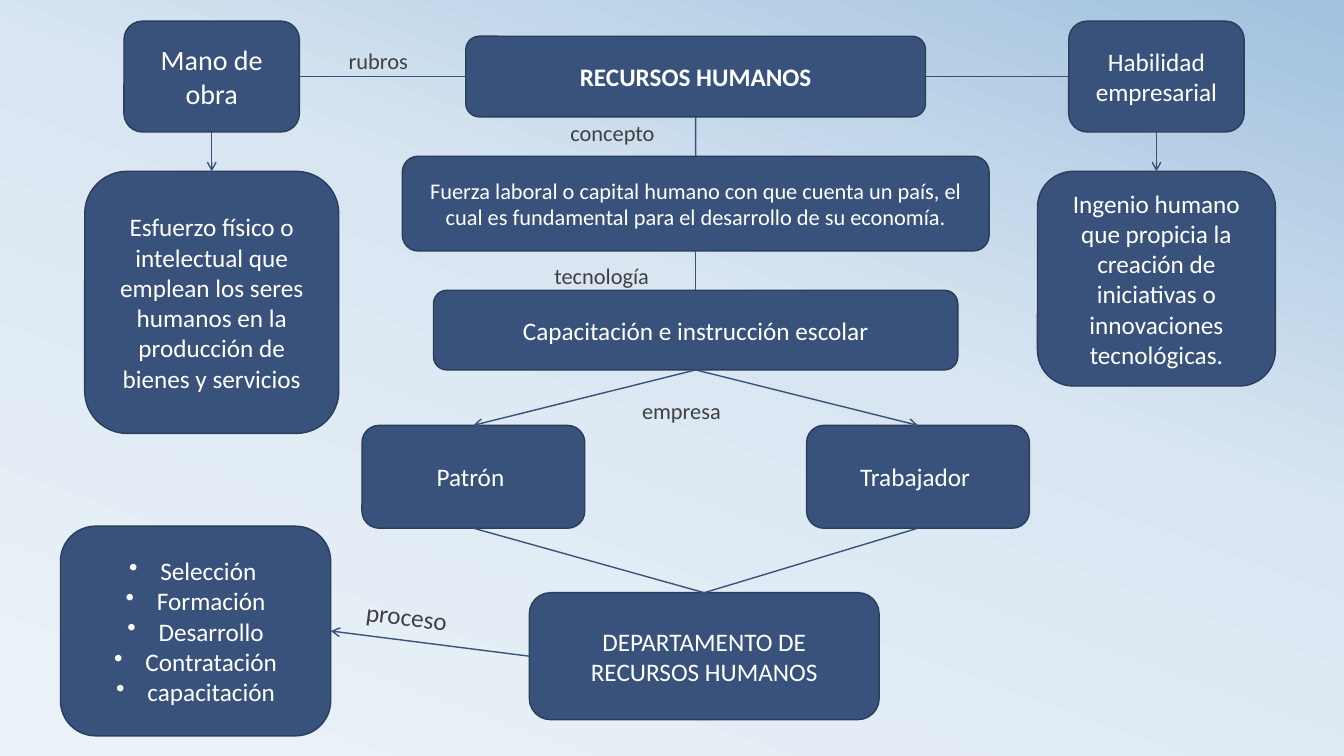
"""Build the concept map of human resources on one slide."""
from copy import deepcopy
from dataclasses import dataclass
from enum import IntEnum

from pptx import Presentation
from pptx.dml.color import RGBColor
from pptx.enum.shapes import MSO_CONNECTOR, MSO_SHAPE
from pptx.enum.text import MSO_ANCHOR, MSO_AUTO_SIZE, PP_ALIGN
from pptx.oxml.ns import qn
from pptx.shapes.autoshape import Shape
from pptx.slide import Slide
from pptx.util import Inches, Pt
from lxml.etree import SubElement


@dataclass(frozen=True)
class Theme:
    font: str = "Calibri"
    box: str = "39527B"
    border: str = "2A3D5B"
    box_text: str = "FFFFFF"
    label_text: str = "404040"
    background: tuple = ((0, "ECF3F8"), (0.58, "D9E6F2"), (1, "A1C1DE"))
    angle: int = 70
    small: int = 16
    body: int = 18
    large: int = 20
    line: int = 1


THEME = Theme()


class Side(IntEnum):
    TOP = 0
    LEFT = 1
    BOTTOM = 2
    RIGHT = 3


@dataclass(frozen=True)
class Box:
    name: str
    left: float
    top: float
    width: float
    height: float
    lines: tuple[str, ...]
    size: int = THEME.body
    bold: bool = False


@dataclass(frozen=True)
class Link:
    start: str
    start_side: Side
    end: str
    end_side: Side
    arrow: bool = False


@dataclass(frozen=True)
class Label:
    text: str
    left: float
    top: float
    width: float
    height: float = 0.36
    size: int = THEME.small
    rotation: float = 0


BOXES = (
    Box("recursos", 4.62, 0.36, 4.56, 0.8, ("RECURSOS HUMANOS",), bold=True),
    Box("concepto", 3.99, 1.55, 5.82, 0.94,
        ("Fuerza laboral o capital humano con que cuenta un país, el cual es "
         "fundamental para el desarrollo de su economía.",), THEME.small),
    Box("capacitación", 4.3, 2.88, 5.2, 0.79, ("Capacitación e instrucción escolar",)),
    Box("patrón", 3.59, 4.22, 2.21, 1.02, ("Patrón ",)),
    Box("trabajador", 8, 4.22, 2.21, 1.02, ("Trabajador ",)),
    Box("departamento", 5.25, 5.88, 3.47, 1.26, ("DEPARTAMENTO DE RECURSOS HUMANOS",)),
    Box("proceso", 0.6, 5.22, 2.68, 2.08,
        ("Selección ", "Formación", "Desarrollo", "Contratación", "capacitación")),
    Box("mano", 1.23, 0.21, 1.74, 1.1, ("Mano de obra",), THEME.large),
    Box("habilidad", 10.6, 0.21, 1.74, 1.1, ("Habilidad empresarial",)),
    Box("esfuerzo", 0.84, 1.7, 2.52, 2.6,
        ("Esfuerzo físico o intelectual que emplean los seres humanos en la "
         "producción de bienes y servicios",)),
    Box("ingenio", 10.29, 1.7, 2.36, 2.13,
        ("Ingenio humano que propicia la creación de iniciativas o "
         "innovaciones tecnológicas.",)),
)

LINKS = (
    Link("recursos", Side.BOTTOM, "concepto", Side.TOP),
    Link("capacitación", Side.TOP, "concepto", Side.BOTTOM),
    Link("capacitación", Side.BOTTOM, "patrón", Side.TOP, True),
    Link("capacitación", Side.BOTTOM, "trabajador", Side.TOP, True),
    Link("patrón", Side.BOTTOM, "departamento", Side.TOP),
    Link("trabajador", Side.BOTTOM, "departamento", Side.TOP),
    Link("departamento", Side.LEFT, "proceso", Side.RIGHT, True),
    Link("recursos", Side.LEFT, "mano", Side.RIGHT),
    Link("recursos", Side.RIGHT, "habilidad", Side.LEFT),
    Link("mano", Side.BOTTOM, "esfuerzo", Side.TOP, True),
    Link("habilidad", Side.BOTTOM, "ingenio", Side.TOP, True),
)

LABELS = (
    Label("concepto", 5.56, 1.15, 1.5),
    Label("tecnología", 5.4, 2.57, 1.81),
    Label("empresa", 6.27, 3.91, 1.44),
    Label("proceso", 3.53, 5.97, 1.5, 0.39, THEME.body, 7.4),
    Label("rubros", 3.36, 0.44, 1.1),
)


def paint_background(s: Slide) -> None:
    """Fill the slide with the three-stop gradient."""
    fill = s.background.fill
    fill.gradient()
    fill.gradient_angle = THEME.angle
    stops = s._element.find(".//" + qn("a:gsLst"))
    stops.append(deepcopy(stops[0]))
    for stop, (position, color) in zip(fill.gradient_stops, THEME.background):
        stop.position = position
        stop.color.rgb = RGBColor.from_string(color)


def set_font(p, size: int, color: str, bold: bool = False) -> None:
    """Set the font of a whole paragraph."""
    p.font.name = THEME.font
    p.font.size = Pt(size)
    p.font.bold = bold
    p.font.color.rgb = RGBColor.from_string(color)


def add_bullet(p) -> None:
    """Give a paragraph a round bullet with a hanging indent."""
    pPr = p._p.get_or_add_pPr()
    pPr.set("marL", str(Inches(0.31)))
    pPr.set("indent", str(Inches(-0.31)))
    bullet = pPr.makeelement(qn("a:buChar"), {"char": "•"})
    pPr.insert_element_before(bullet, "a:tabLst", "a:defRPr", "a:extLst")


def add_box(s: Slide, box: Box) -> Shape:
    """Draw a rounded box, with bullets if it holds several lines."""
    sp = s.shapes.add_shape(MSO_SHAPE.ROUNDED_RECTANGLE, Inches(box.left),
                            Inches(box.top), Inches(box.width), Inches(box.height))
    sp.shadow.inherit = False
    sp.fill.solid()
    sp.fill.fore_color.rgb = RGBColor.from_string(THEME.box)
    sp.line.color.rgb = RGBColor.from_string(THEME.border)
    sp.line.width = Pt(THEME.line)
    tf = sp.text_frame
    tf.word_wrap = True
    tf.vertical_anchor = MSO_ANCHOR.MIDDLE
    tf.text = "\n".join(box.lines)
    for p in tf.paragraphs:
        p.alignment = PP_ALIGN.CENTER
        set_font(p, box.size, THEME.box_text, box.bold)
        if len(box.lines) > 1:
            add_bullet(p)
    return sp


def add_link(s: Slide, link: Link, shapes: dict[str, Shape]) -> None:
    """Join two boxes with a straight line or arrow."""
    cxn = s.shapes.add_connector(MSO_CONNECTOR.STRAIGHT, 0, 0, 0, 0)
    cxn.begin_connect(shapes[link.start], link.start_side.value)
    cxn.end_connect(shapes[link.end], link.end_side.value)
    cxn.line.color.rgb = RGBColor.from_string(THEME.box)
    cxn.line.width = Pt(THEME.line)
    if link.arrow:
        SubElement(cxn.line._get_or_add_ln(), qn("a:tailEnd"), type="arrow")
    SubElement(cxn._element.spPr, qn("a:effectLst"))


def add_label(s: Slide, label: Label) -> None:
    """Write the word that names a link."""
    sp = s.shapes.add_textbox(Inches(label.left), Inches(label.top),
                              Inches(label.width), Inches(label.height))
    sp.rotation = label.rotation
    tf = sp.text_frame
    tf.word_wrap = True
    tf.auto_size = MSO_AUTO_SIZE.SHAPE_TO_FIT_TEXT
    p = tf.paragraphs[0]
    p.text = label.text
    p.line_spacing = 0.95
    set_font(p, label.size, THEME.label_text)


def main() -> None:
    """Build and save the presentation."""
    prs = Presentation()
    prs.slide_width, prs.slide_height = Inches(13.33), Inches(7.5)
    s = prs.slides.add_slide(prs.slide_layouts[6])
    paint_background(s)
    shapes = {box.name: add_box(s, box) for box in BOXES}
    for link in LINKS:
        add_link(s, link, shapes)
    for label in LABELS:
        add_label(s, label)
    prs.save("out.pptx")


if __name__ == "__main__":
    main()
